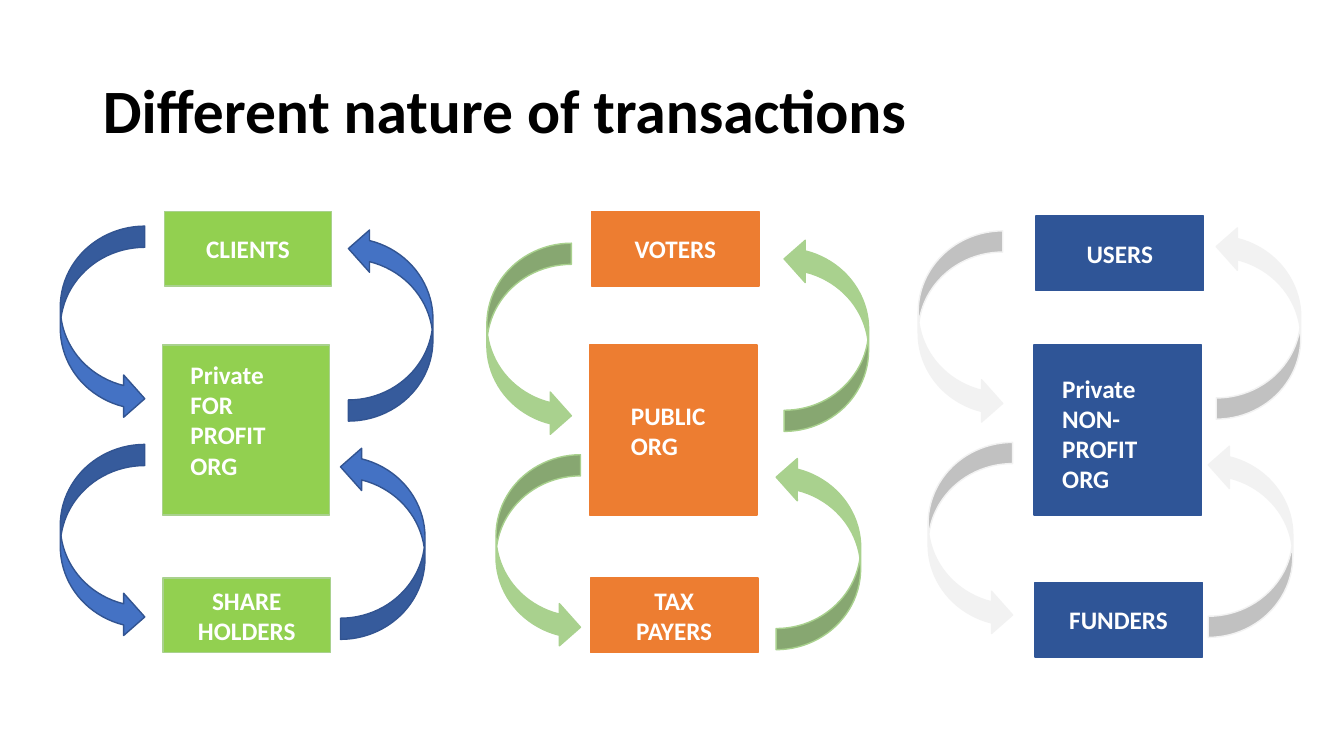
import pptx
import pptx.util
import pptx.dml.color
import pptx.enum.shapes
import pptx.enum.text

Cm = pptx.util.Cm
Pt = pptx.util.Pt
KIND = pptx.enum.shapes.MSO_SHAPE
ALIGN = pptx.enum.text.PP_ALIGN
ANCHOR = pptx.enum.text.MSO_ANCHOR

HEX = {
    "black": "000000", "white": "FFFFFF", "lime": "92D050",
    "sage": "A9D18E", "orange": "ED7D31", "navy": "2F5597",
    "blue": "4472C4", "edge": "325491", "pale": "F2F2F2",
}

BOX_W, MID_H, END_H = 4.22, 4.29, 1.88
MID_TOP, FOOT_DROP = 8.69, 9.24
ARROW_W, ARROW_H = 2.13, 4.88
SPAN, RISE = 7.06, 5.5

# head, org, foot: lines of text; pad: left, top, right insets of org
# loop: lower left arrow, x from the box and y; nudge: shift of the upper left one
COLUMNS = [
    dict(left=4.09, top=5.33, fill="lime", line="sage",
         head=["CLIENTS"], org=["Private", "FOR PROFIT ORG"],
         foot=["SHARE", "HOLDERS"], pad=(0.71, 0.36, 0.64),
         arrow="blue", edge="edge", loop=(-2.57, 11.2), nudge=(0, 0)),
    dict(left=14.86, top=5.33, fill="orange", line="orange",
         head=["VOTERS"], org=["PUBLIC", "ORG"],
         foot=["TAX", "PAYERS"], pad=(1.04, 1.4, 0.2),
         arrow="sage", edge="sage", loop=(-2.36, 11.46), nudge=(-0.23, 0.17)),
    dict(left=26.06, top=5.44, fill="navy", line="navy",
         head=["USERS"], org=["Private NON-PROFIT ORG"],
         foot=["FUNDERS"], pad=(0.71, 0.71, 1.3),
         arrow="pale", edge="pale", loop=(-2.67, 11.15), nudge=(-0.25, 0.17)),
]


def rgb(name):
    return pptx.dml.color.RGBColor.from_string(HEX[name])


def apply(item, values):
    for name, value in values.items():
        setattr(item, name, value)


def style(part, size, color):
    apply(part.font, dict(name="Calibri", size=Pt(size), bold=True))
    part.font.color.rgb = rgb(color)


def shape(slide, kind, box, fill, line):
    item = slide.shapes.add_shape(kind, *map(Cm, box))
    item.shadow.inherit = False
    item.fill.solid()
    item.fill.fore_color.rgb = rgb(fill)
    item.line.color.rgb = rgb(line)
    item.line.width = Pt(1)
    return item


def write(frame, lines, align):
    frame.text = "\n".join(lines)
    frame.word_wrap = True
    for part in frame.paragraphs:
        part.alignment = align
        style(part, 18, "white")


def title(slide, text, box):
    item = slide.shapes.title
    apply(item, dict(zip(("left", "top", "width", "height"), map(Cm, box))))
    frame = item.text_frame
    frame.text = text
    apply(frame, dict(vertical_anchor=ANCHOR.MIDDLE, word_wrap=True,
                      auto_size=pptx.enum.text.MSO_AUTO_SIZE.NONE))
    part = frame.paragraphs[0]
    apply(part, dict(alignment=ALIGN.LEFT, line_spacing=0.9))
    style(part, 44, "black")


def boxes(slide, col):
    """Stack the organisation between the two parties it deals with."""
    left, top = col["left"], col["top"]
    colors = col["fill"], col["line"]
    org = shape(slide, KIND.RECTANGLE, (left, MID_TOP, BOX_W, MID_H), *colors)
    write(org.text_frame, col["org"], ALIGN.LEFT)
    pad = dict(zip(("margin_left", "margin_top", "margin_right"),
                   map(Cm, col["pad"])))
    apply(org.text_frame, dict(pad, vertical_anchor=ANCHOR.TOP))

    for lines, x, y in ((col["head"], left + 0.05, top),
                        (col["foot"], left + 0.02, top + FOOT_DROP)):
        end = shape(slide, KIND.RECTANGLE, (x, y, BOX_W, END_H), *colors)
        write(end.text_frame, lines, ALIGN.CENTER)
        end.text_frame.vertical_anchor = ANCHOR.MIDDLE


def arrows(slide, col):
    """Circle the stack: down on the left, up on the right."""
    x, y = col["left"] + col["loop"][0], col["loop"][1]
    dx, dy = col["nudge"]
    spots = [
        (x + dx, y - RISE + dy, 0),
        (x, y, 0),
        (x + SPAN, y + 0.03, 180),
        (x + SPAN + 0.2, y + 0.03 - RISE, 180),
    ]
    for left, top, turn in spots:
        item = shape(slide, KIND.CURVED_RIGHT_ARROW,
                     (left, top, ARROW_W, ARROW_H), col["arrow"], col["edge"])
        item.rotation = turn


def main():
    deck = pptx.Presentation()
    apply(deck, dict(slide_width=Cm(33.87), slide_height=Cm(19.05)))
    slide = deck.slides.add_slide(deck.slide_layouts[5])
    title(slide, "Different nature of transactions", (2.34, 1.02, 29.21, 3.68))
    for col in COLUMNS:
        boxes(slide, col)
        arrows(slide, col)
    deck.save("out.pptx")


if __name__ == "__main__":
    main()
